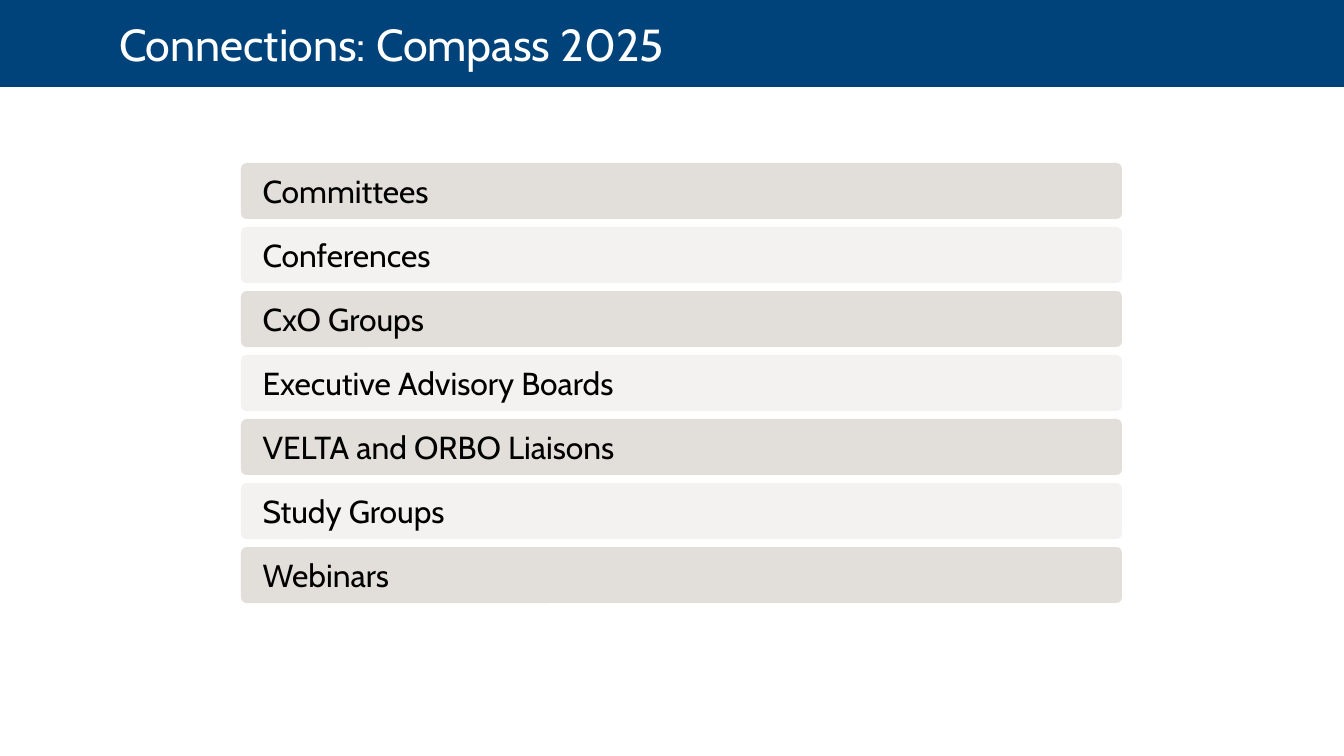
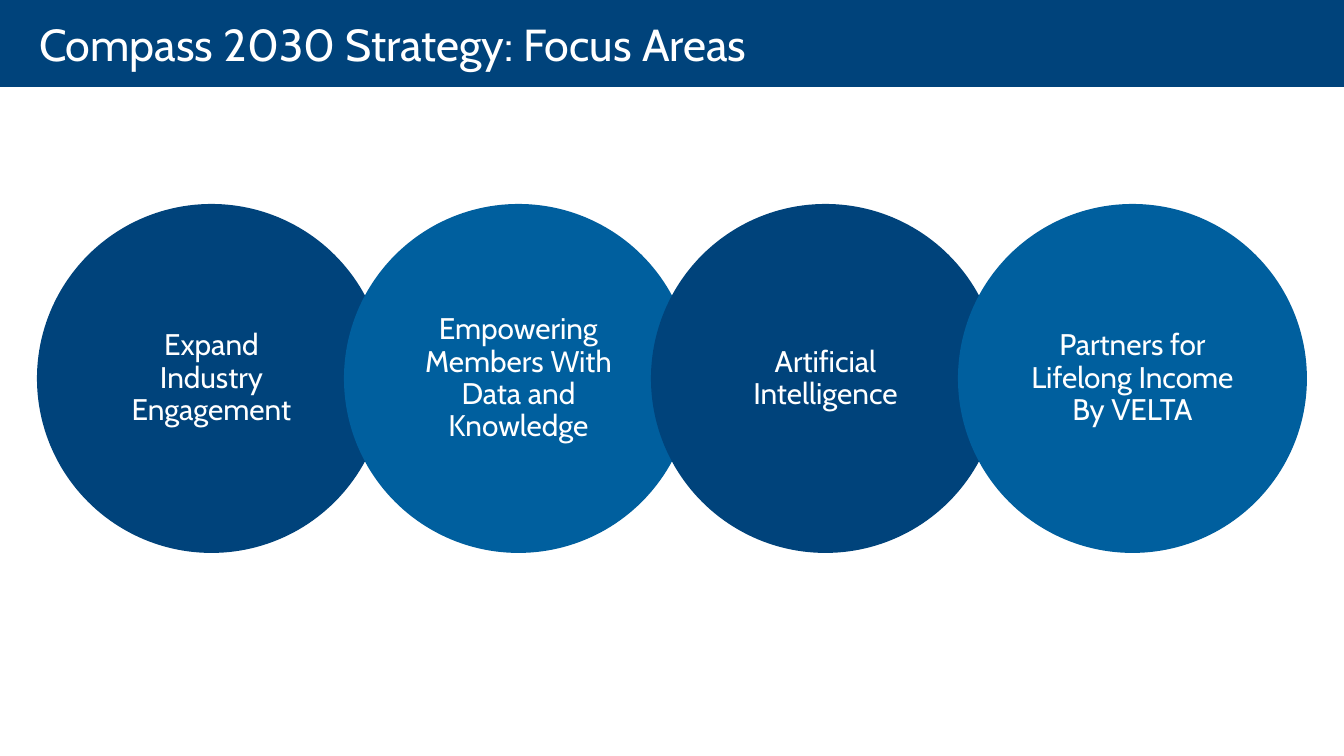
from pptx import Presentation
from pptx.dml.color import RGBColor
from pptx.enum.shapes import MSO_SHAPE
from pptx.enum.text import MSO_ANCHOR, PP_ALIGN
from pptx.util import Pt

RECT, ROUND, OVAL = MSO_SHAPE.RECTANGLE, MSO_SHAPE.ROUNDED_RECTANGLE, MSO_SHAPE.OVAL
LEFT, CENTER = PP_ALIGN.LEFT, PP_ALIGN.CENTER
MIDDLE = MSO_ANCHOR.MIDDLE

SCALE = 914400 / 100.8
WIDE, HIGH = 1344, 756
FONT = "Cabin"
COLORS = {
    "navy": "00437B",
    "blue": "005F9E",
    "sand": "E2DED9",
    "pale": "F3F2F0",
    "white": "FFFFFF",
    "black": "000000",
}


def px(n):
    return round(n * SCALE)


class Deck:
    def __init__(self):
        self.prs = Presentation()
        self.prs.slide_width, self.prs.slide_height = px(WIDE), px(HIGH)
        self.slide = None

    def page(self, title, indent):
        """Start a slide with its title band."""
        self.slide = self.prs.slides.add_slide(self.prs.slide_layouts[6])
        band = self.shape(RECT, 0, 0, WIDE, 87, "navy")
        self.text(band, title, 32, "white", LEFT, indent, 20)

    def shape(self, kind, x, y, w, h, fill):
        item = self.slide.shapes.add_shape(kind, px(x), px(y), px(w), px(h))
        item.shadow.inherit = False
        item.fill.solid()
        item.fill.fore_color.rgb = RGBColor.from_string(COLORS[fill])
        item.line.fill.background()
        return item

    def text(self, item, words, size, color, align, left, right, space=1.0):
        frame = item.text_frame
        frame.text = words
        frame.word_wrap = True
        frame.vertical_anchor = MIDDLE
        frame.margin_left, frame.margin_right = px(left), px(right)
        frame.margin_top = frame.margin_bottom = 0
        for para in frame.paragraphs:
            para.alignment = align
            para.line_spacing = space
            for run in para.runs:
                run.font.name = FONT
                run.font.size = Pt(size)
                run.font.color.rgb = RGBColor.from_string(COLORS[color])

    def bar(self, x, y, w, h, fill, words):
        item = self.shape(ROUND, x, y, w, h, fill)
        item.adjustments[0] = 0.1
        self.text(item, words, 22.7, "black", LEFT, 20, 10)

    def disc(self, x, y, size, fill, words, width):
        """Draw a circle whose label wraps at the given width."""
        item = self.shape(OVAL, x, y, size, size, fill)
        inset = (size * 0.707 - width) / 2
        self.text(item, words, 21.3, "white", CENTER, inset, inset, 0.9)


def main():
    deck = Deck()

    deck.page("Connections: Compass 2025", 119)
    groups = [
        "Committees",
        "Conferences",
        "CxO Groups",
        "Executive Advisory Boards",
        "VELTA and ORBO Liaisons",
        "Study Groups",
        "Webinars",
    ]
    for i, group in enumerate(groups):
        deck.bar(241, 163 + 64 * i, 881, 56, ("sand", "pale")[i % 2], group)

    deck.page("Compass 2030 Strategy: Focus Areas", 39)
    areas = [
        ("Expand Industry Engagement", 176),
        ("Empowering Members With Data and Knowledge", 218),
        ("Artificial Intelligence", 200),
        ("Partners for Lifelong Income\nBy VELTA", 218),
    ]
    for i, (area, width) in enumerate(areas):
        deck.disc(37 + 307 * i, 204, 349, ("navy", "blue")[i % 2], area, width)

    deck.prs.save("out.pptx")


if __name__ == "__main__":
    main()
